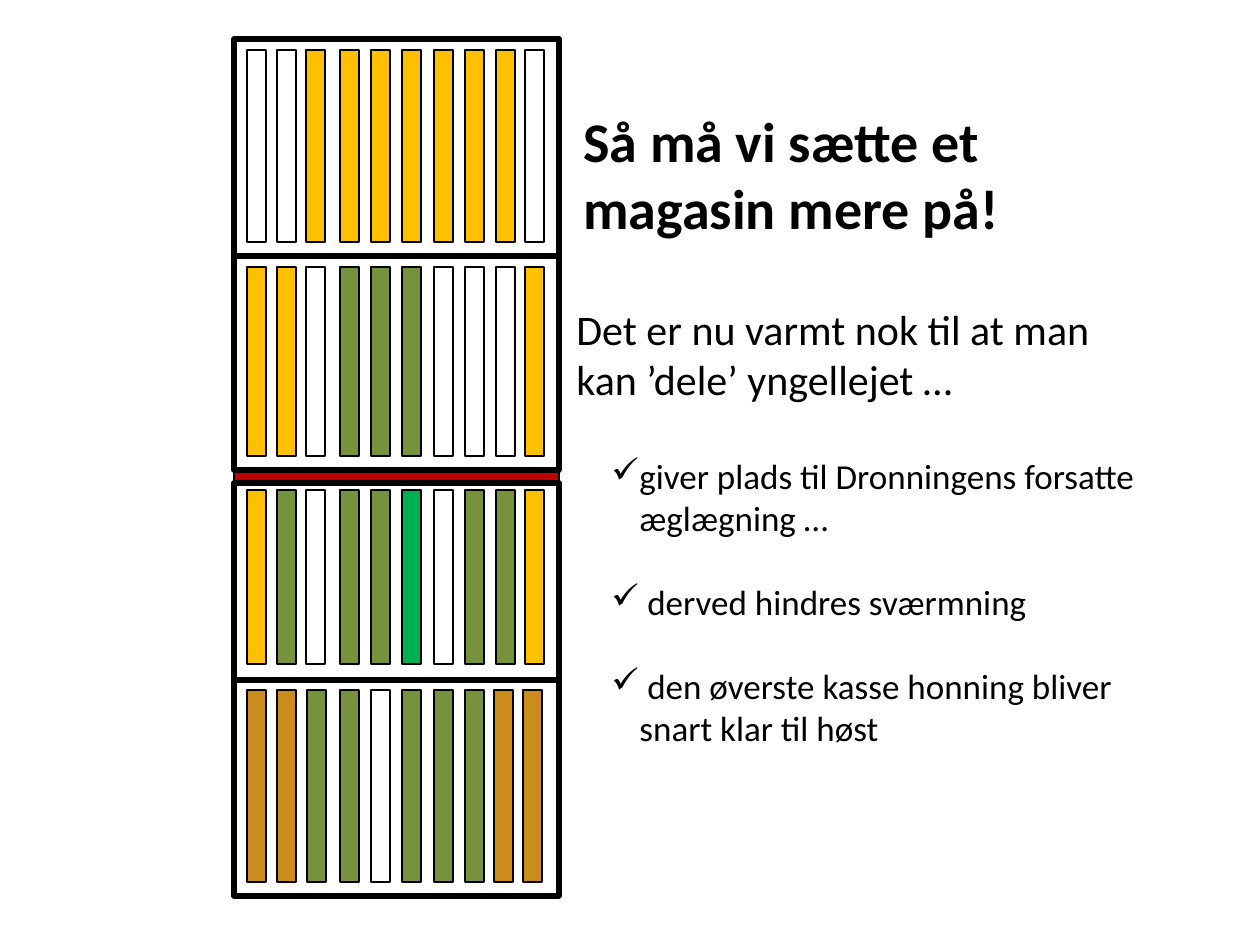
import pptx
import pptx.dml.color
import pptx.enum.shapes
import pptx.enum.text
import pptx.util
from lxml import etree
from pptx.oxml.ns import qn

PX_PER_INCH = 126
BLACK, WHITE, RED = "000000", "FFFFFF", "C00000"

# H honey, B brood, Q queen's frame, F fodder, - empty
FRAME_COLOURS = {"H": "FFC000", "B": "76923C", "Q": "00B050", "F": "CA8C1C", "-": None}
FRAME_LEFTS = [247, 277, 306, 340, 371, 402, 434, 465, 496, 525]
BOTTOM_FRAME_LEFTS = [247, 277, 307, 340, 371, 402, 434, 465, 494, 523]
FRAME_WIDTH = 19
HIVE_LEFT, HIVE_WIDTH = 234, 325

# box top, box height, frame top, frame height, frames, frame lefts; bottom box first
BOXES = [
    (679, 217, 690, 192, "FFBB-BBBFF", BOTTOM_FRAME_LEFTS),
    (483, 197, 490, 174, "HB-BBQ-BBH", FRAME_LEFTS),
    (256, 214, 267, 189, "HH-BBB---H", FRAME_LEFTS),
    (39, 217, 50, 192, "--HHHHHHH-", FRAME_LEFTS),
]

INTRO = "Det er nu varmt nok til at man kan ’dele’ yngellejet …"
BENEFITS = [
    "giver plads til Dronningens forsatte æglægning …",
    " derved hindres sværmning",
    " den øverste kasse honning bliver snart klar til høst",
]


def px(length):
    return pptx.util.Emu(round(length * 914400 / PX_PER_INCH))


def colour(value):
    return pptx.dml.color.RGBColor.from_string(value)


def add_block(shapes, kind, box, fill, line_width):
    block = shapes.add_shape(kind, *map(px, box))
    block.shadow.inherit = False
    if fill:
        block.fill.solid()
        block.fill.fore_color.rgb = colour(fill)
    else:
        block.fill.background()
    block.line.color.rgb = colour(BLACK)
    block.line.width = pptx.util.Pt(line_width)
    return block


def add_queen_excluder(slide):
    excluder = add_block(slide.shapes, pptx.enum.shapes.MSO_SHAPE.LINE_CALLOUT_1,
                         (HIVE_LEFT, 472, HIVE_WIDTH, 10), RED, 0.75)
    for index, value in enumerate((2, 0.04, 2, 1)):
        excluder.adjustments[index] = value


def add_hive_box(slide, top, height, frame_top, frame_height, frames, lefts):
    rectangle = pptx.enum.shapes.MSO_SHAPE.RECTANGLE
    hive_box = slide.shapes.add_group_shape().shapes
    add_block(hive_box, rectangle, (HIVE_LEFT, top, HIVE_WIDTH, height), WHITE, 3)
    for left, frame in zip(lefts, frames):
        add_block(hive_box, rectangle, (left, frame_top, FRAME_WIDTH, frame_height),
                  FRAME_COLOURS[frame], 0.75)


def add_text_area(slide, box):
    area = slide.shapes.add_textbox(*map(px, box)).text_frame
    area.word_wrap = True
    area.auto_size = pptx.enum.text.MSO_AUTO_SIZE.SHAPE_TO_FIT_TEXT
    return area


def write(paragraph, text, size, bold=False, space_before=None):
    run = paragraph.add_run()
    run.text = text
    formats = {"name": "Calibri", "size": pptx.util.Pt(size), "bold": bold}
    for key, value in formats.items():
        setattr(run.font, key, value)
    run.font.color.rgb = colour(BLACK)
    if space_before:
        paragraph.space_before = pptx.util.Pt(space_before)


def indent(paragraph, left, hanging=0, bullet=None):
    properties = paragraph._p.get_or_add_pPr()
    properties.set("marL", str(px(left)))
    properties.set("indent", str(-px(hanging)))
    if bullet:
        etree.SubElement(properties, qn("a:buChar")).set("char", bullet)


def add_explanation(slide):
    explanation = add_text_area(slide, (501, 297, 650, 471))
    intro = explanation.paragraphs[0]
    indent(intro, 63)
    write(intro, INTRO, 24)
    for number, benefit in enumerate(BENEFITS):
        item = explanation.add_paragraph()
        indent(item, 126, hanging=28, bullet="✓")
        write(item, benefit, 20, space_before=24 if number else 29)


def main():
    presentation = pptx.Presentation()
    presentation.slide_width = px(1260)
    presentation.slide_height = px(945)
    slide = presentation.slides.add_slide(presentation.slide_layouts[6])
    add_queen_excluder(slide)
    add_explanation(slide)
    for box in BOXES:
        add_hive_box(slide, *box)
    heading = add_text_area(slide, (571, 100, 601, 149))
    write(heading.paragraphs[0], "Så må vi sætte et magasin mere på!", 32, bold=True)
    presentation.save("out.pptx")


if __name__ == "__main__":
    main()
